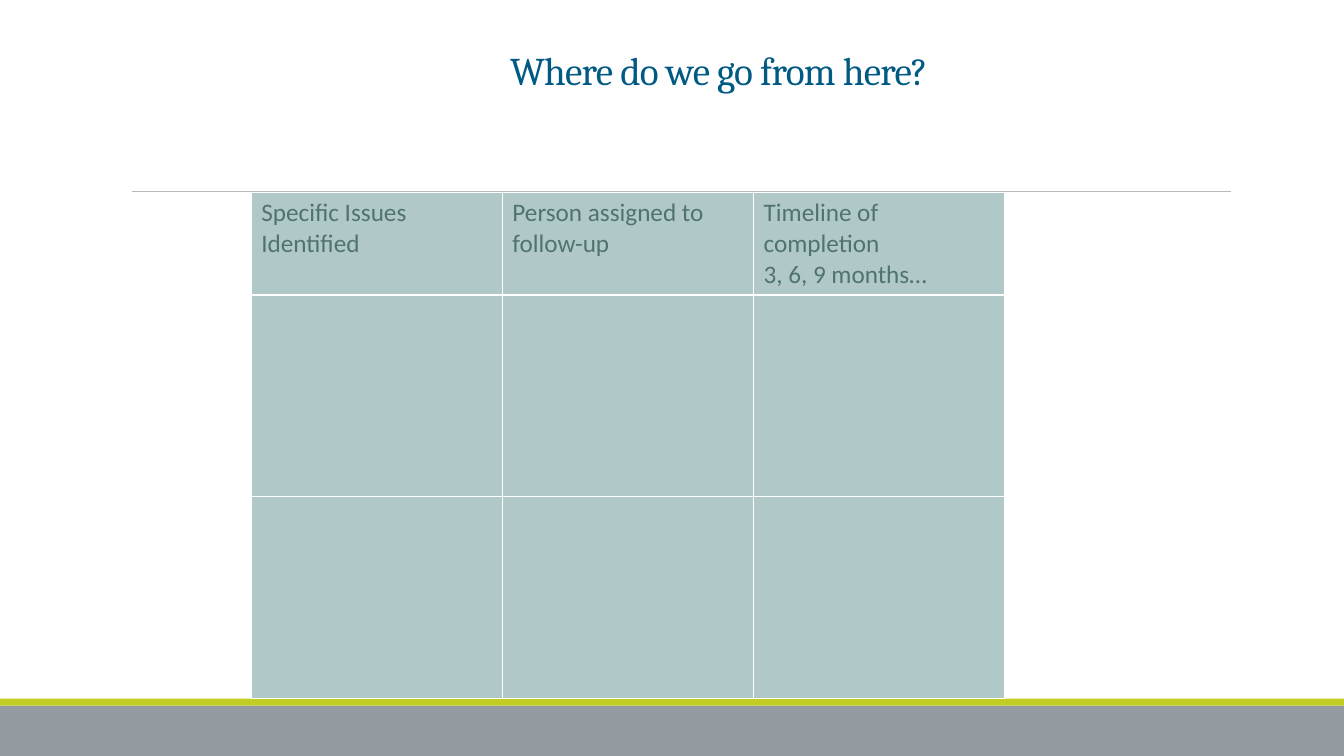
from lxml import etree
from pptx import Presentation
from pptx.dml.color import RGBColor
from pptx.enum.shapes import MSO_CONNECTOR, MSO_SHAPE
from pptx.enum.text import MSO_ANCHOR, MSO_AUTO_SIZE, PP_ALIGN
from pptx.oxml.ns import qn
from pptx.util import Pt

RECTANGLE = MSO_SHAPE.RECTANGLE
STRAIGHT = MSO_CONNECTOR.STRAIGHT
LEFT = PP_ALIGN.LEFT
TOP, BOTTOM = MSO_ANCHOR.TOP, MSO_ANCHOR.BOTTOM
NO_AUTOFIT = MSO_AUTO_SIZE.NONE

SLIDE_WIDTH, SLIDE_HEIGHT = 960, 540
COLORS = {
    "title": "005A84",
    "header": "507372",
    "cell": "B0C8C7",
    "border": "FFFFFF",
    "rule": "B4B8BB",
    "stripe": "C2CD23",
    "band": "939BA1",
}
HEADERS = [
    "Specific Issues Identified",
    "Person assigned to follow-up",
    "Timeline of completion\n3, 6, 9 months…",
]
ROW_HEIGHTS = [70, 144, 144]


def color(name):
    return RGBColor.from_string(COLORS[name])


def write_text(frame, text, *, font, size, ink, spacing=None, tracking=None):
    frame.text = text
    frame.word_wrap = True
    for paragraph in frame.paragraphs:
        paragraph.alignment = LEFT
        if spacing:
            paragraph.line_spacing = spacing
        for run in paragraph.runs:
            run.font.name = font
            run.font.size = Pt(size)
            run.font.bold = False
            run.font.color.rgb = color(ink)
            if tracking:
                run.font._element.set("spc", str(round(tracking * 100)))


def add_bar(slide, left, top, width, height, fill):
    bar = slide.shapes.add_shape(RECTANGLE, Pt(left), Pt(top), Pt(width), Pt(height))
    bar.shadow.inherit = False
    bar.fill.solid()
    bar.fill.fore_color.rgb = color(fill)
    bar.line.fill.background()


def add_footer(slide, left, top, width, height, stripe_height=5):
    add_bar(slide, left, top + stripe_height, width, height - stripe_height, "band")
    add_bar(slide, left, top, width, stripe_height, "stripe")


def add_rule(slide, left, top, width):
    rule = slide.shapes.add_connector(STRAIGHT, Pt(left), Pt(top), Pt(left + width), Pt(top))
    rule.line.color.rgb = color("rule")
    rule.line.width = Pt(0.75)
    etree.SubElement(rule._element.spPr, qn("a:effectLst"))


def add_title(slide, left, top, width, height):
    title = slide.shapes.title
    title.left, title.top, title.width, title.height = Pt(left), Pt(top), Pt(width), Pt(height)
    frame = title.text_frame
    write_text(frame, "Where do we go from here?", font="Cambria", size=28,
               ink="title", spacing=0.85, tracking=-0.5)
    frame.vertical_anchor = BOTTOM
    frame.auto_size = NO_AUTOFIT


def set_borders(cell, width=1):
    properties = cell._tc.get_or_add_tcPr()
    for position, side in enumerate(("a:lnL", "a:lnR", "a:lnT", "a:lnB")):
        border = etree.Element(qn(side), w=str(Pt(width)))
        fill = etree.SubElement(border, qn("a:solidFill"))
        etree.SubElement(fill, qn("a:srgbClr"), val=COLORS["border"])
        properties.insert(position, border)


def add_action_table(slide, left, top, width):
    frame = slide.shapes.add_table(len(ROW_HEIGHTS), len(HEADERS), Pt(left), Pt(top),
                                   Pt(width), Pt(sum(ROW_HEIGHTS)))
    actions = frame.table
    actions.horz_banding = False
    for column in actions.columns:
        column.width = Pt(width / len(HEADERS))
    for row, height in zip(actions.rows, ROW_HEIGHTS):
        row.height = Pt(height)
    for cell in actions.iter_cells():
        cell.fill.solid()
        cell.fill.fore_color.rgb = color("cell")
        cell.vertical_anchor = TOP
        set_borders(cell)
    for cell, header in zip(actions.rows[0].cells, HEADERS):
        write_text(cell.text_frame, header, font="Calibri", size=18, ink="header")


def main():
    deck = Presentation()
    deck.slide_width, deck.slide_height = Pt(SLIDE_WIDTH), Pt(SLIDE_HEIGHT)
    title_only = deck.slide_layouts[5]
    slide = deck.slides.add_slide(title_only)

    # Footer band and the rule under the title
    add_footer(slide, 0, 499, SLIDE_WIDTH, 41)
    add_rule(slide, 94.3, 136.6, 784.8)

    # Title and follow-up table
    add_title(slide, 357.1, 33.1, 483.1, 37.4)
    add_action_table(slide, 179.5, 137.6, 538.2)

    deck.save("out.pptx")


if __name__ == "__main__":
    main()
